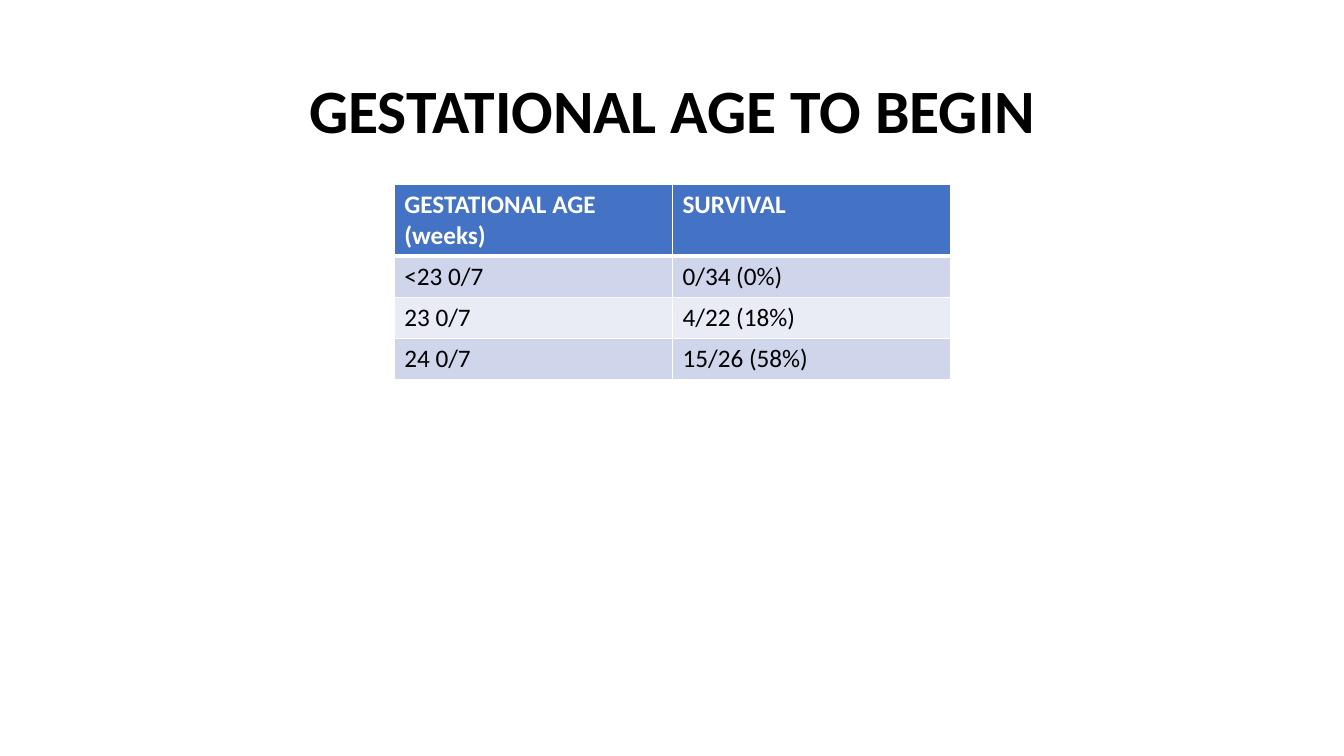
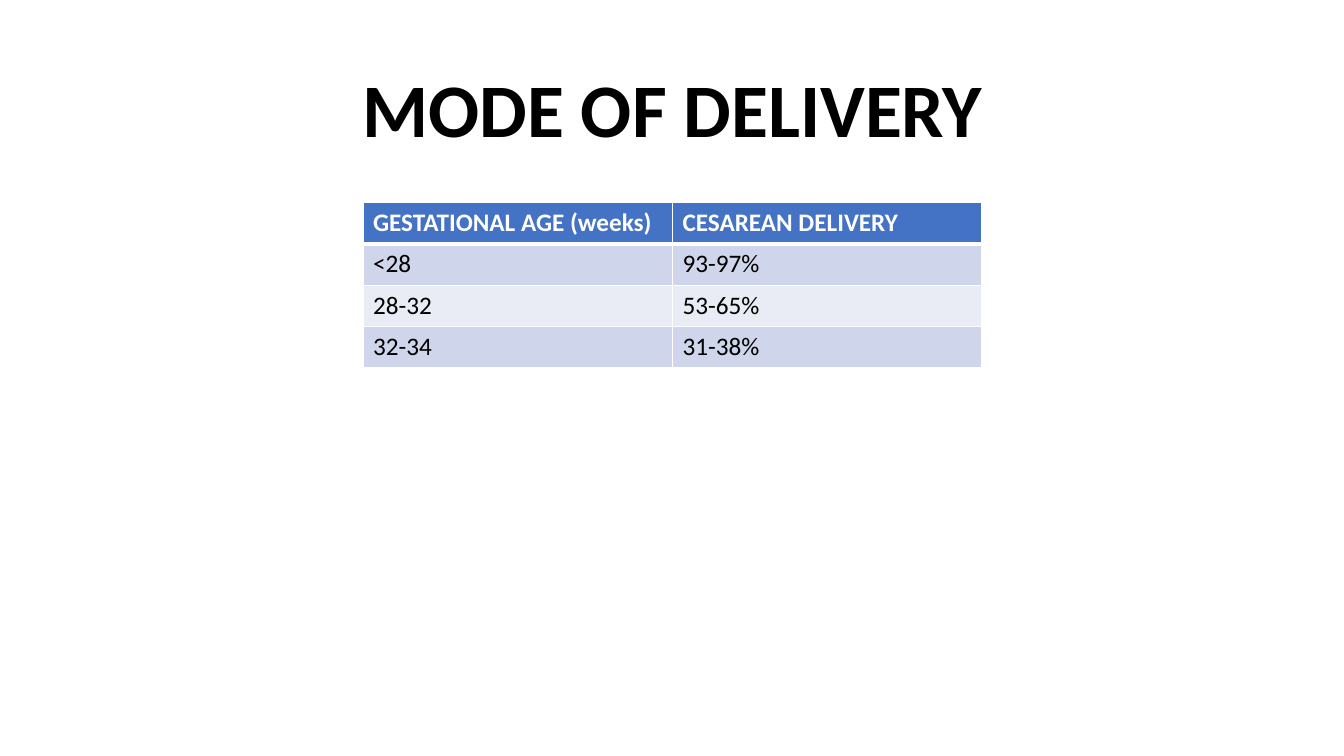
from lxml.etree import SubElement
from pptx import Presentation
from pptx.dml.color import RGBColor
from pptx.enum.text import MSO_ANCHOR, PP_ALIGN
from pptx.oxml.ns import qn
from pptx.util import Inches, Pt

FONT = "Calibri"
BLACK, WHITE, HEADER = "000000", "FFFFFF", "4472C4"
BANDS = ["CFD5EA", "E9EBF5"]
TITLE_BOX = (0.92, 0.4, 11.5, 1.45)
ROW_HEIGHT = 0.41
THIN, THICK = 1, 3

SLIDES = [
    {
        "title": "GESTATIONAL AGE TO BEGIN",
        "title_size": 44,
        "table_at": (3.91, 1.83),
        "column_width": 2.76,
        "rows": [
            ("GESTATIONAL AGE\n(weeks)", "SURVIVAL"),
            ("<23 0/7", "0/34 (0%)"),
            ("23 0/7", "4/22 (18%)"),
            ("24 0/7", "15/26 (58%)"),
        ],
    },
    {
        "title": "MODE OF DELIVERY",
        "title_size": 54,
        "table_at": (3.6, 2.01),
        "column_width": 3.07,
        "rows": [
            ("GESTATIONAL AGE (weeks)", "CESAREAN DELIVERY"),
            ("<28", "93-97%"),
            ("28-32", "53-65%"),
            ("32-34", "31-38%"),
        ],
    },
]


def color(value):
    return RGBColor.from_string(value)


def add_span(para, text, size, ink, bold):
    span = para.add_run()
    span.text = text
    span.font.name = FONT
    span.font.size = Pt(size)
    span.font.bold = bold
    span.font.color.rgb = color(ink)


def add_title(page, text, size):
    box = page.shapes.title
    box.left, box.top, box.width, box.height = map(Inches, TITLE_BOX)
    box.text_frame.vertical_anchor = MSO_ANCHOR.MIDDLE
    box.text_frame.word_wrap = True
    para = box.text_frame.paragraphs[0]
    para.alignment = PP_ALIGN.CENTER
    para.line_spacing = 0.9
    add_span(para, text, size, BLACK, True)


def set_borders(cell, top, bottom):
    properties = cell._tc.get_or_add_tcPr()
    for side, width in (("L", THIN), ("R", THIN), ("T", top), ("B", bottom)):
        line = SubElement(properties, qn(f"a:ln{side}"), w=str(Pt(width)))
        fill = SubElement(line, qn("a:solidFill"))
        SubElement(fill, qn("a:srgbClr"), val=WHITE)


def fill_cell(cell, text, row):
    is_header = row == 0
    set_borders(cell, THICK if row == 1 else THIN, THICK if is_header else THIN)
    cell.fill.solid()
    cell.fill.fore_color.rgb = color(HEADER if is_header else BANDS[(row - 1) % 2])
    frame = cell.text_frame
    for index, line in enumerate(text.split("\n")):
        para = frame.add_paragraph() if index else frame.paragraphs[0]
        add_span(para, line, 18, WHITE if is_header else BLACK, is_header)


def add_data_table(page, rows, at, column_width):
    columns = len(rows[0])
    size = (column_width * columns, ROW_HEIGHT * len(rows))
    frame = page.shapes.add_table(len(rows), columns, *map(Inches, at + size))
    for column in frame.table.columns:
        column.width = Inches(column_width)
    for row, texts in enumerate(rows):
        frame.table.rows[row].height = Inches(ROW_HEIGHT)
        for column, text in enumerate(texts):
            fill_cell(frame.table.cell(row, column), text, row)


def main():
    deck = Presentation()
    deck.slide_width, deck.slide_height = Inches(13.33), Inches(7.5)
    for content in SLIDES:
        page = deck.slides.add_slide(deck.slide_layouts[5])
        add_title(page, content["title"], content["title_size"])
        add_data_table(page, content["rows"], content["table_at"], content["column_width"])
    deck.save("out.pptx")


if __name__ == "__main__":
    main()
